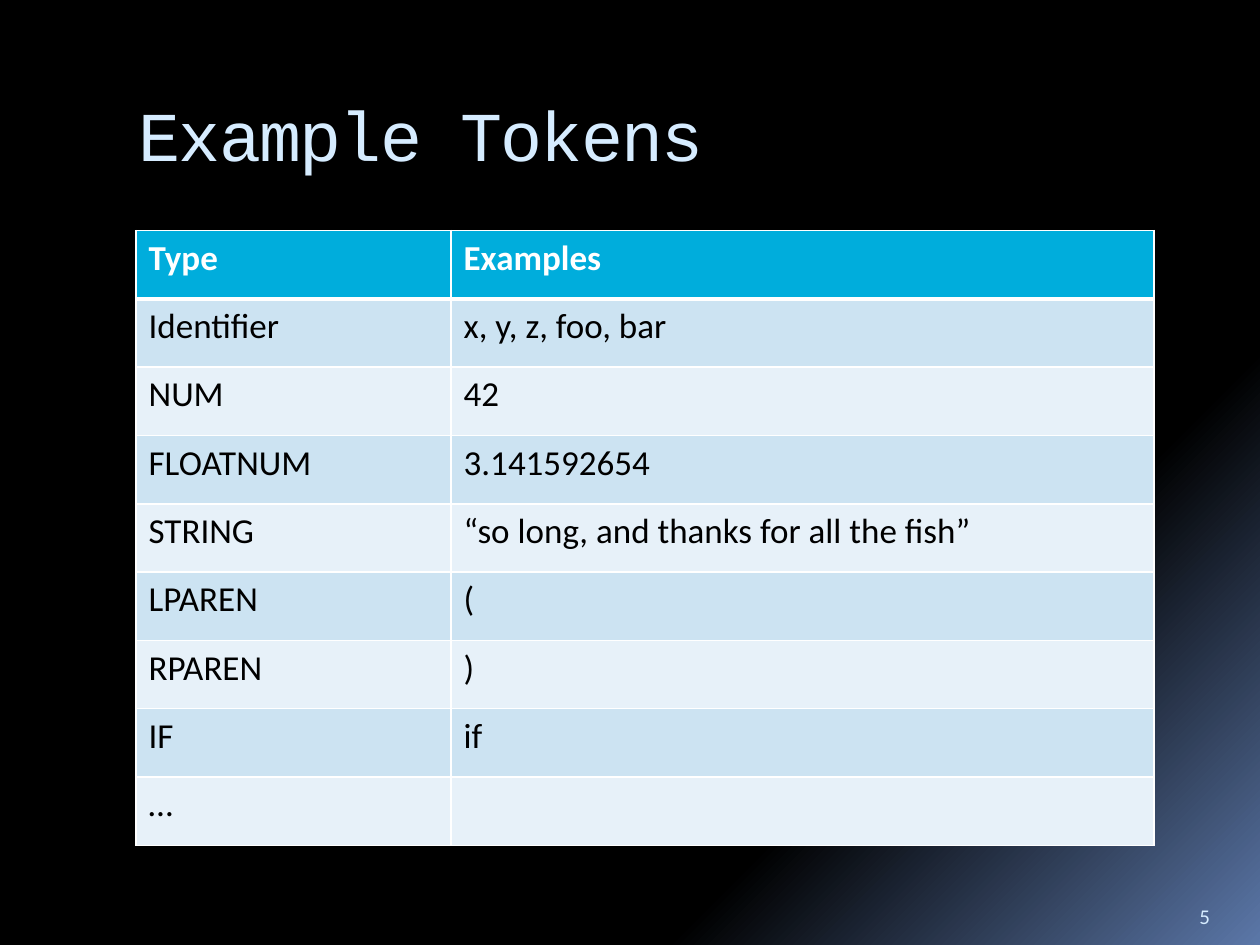
"""Build the slide that lists example tokens in a two-column table."""
from lxml import etree
from pptx import Presentation
from pptx import util as u
from pptx.dml.color import RGBColor
from pptx.enum import text as t
from pptx.oxml import ns

BLACK = RGBColor(0x00, 0x00, 0x00)
WHITE = RGBColor(0xFF, 0xFF, 0xFF)
ICE = RGBColor(0xD6, 0xEC, 0xFF)
DUSK = RGBColor(0x5B, 0x77, 0xA8)
CYAN = RGBColor(0x00, 0xAD, 0xDC)
BANDS = RGBColor(0xCC, 0xE3, 0xF2), RGBColor(0xE7, 0xF1, 0xF9)

TOKENS = [
    ("Type", "Examples"),
    ("Identifier", "x, y, z, foo, bar"),
    ("NUM", "42"),
    ("FLOATNUM", "3.141592654"),
    ("STRING", "“so long, and thanks for all the fish”"),
    ("LPAREN", "("),
    ("RPAREN", ")"),
    ("IF", "if"),
    ("…", ""),
]


def px(*vals):
    return [u.Emu(v * 9144) for v in vals]


def write(frame, words, size=20, color=BLACK, font="Calibri", bold=False, space=0):
    para = frame.paragraphs[0]
    para.alignment = t.PP_ALIGN.LEFT
    run = para.add_run()
    run.text = words
    run.font.size = u.Pt(size)
    run.font.name = font
    run.font.bold = bold
    run.font.color.rgb = color
    if space:
        run.font._element.set("spc", str(space * 100))


def edge(cell, side, width):
    props = cell._tc.get_or_add_tcPr()
    line = etree.SubElement(props, ns.qn(f"a:ln{side}"), w=str(u.Pt(width)))
    fill = etree.SubElement(line, ns.qn("a:solidFill"))
    etree.SubElement(fill, ns.qn("a:srgbClr"), val=str(WHITE))


class Deck:
    def __init__(self):
        self.prs = Presentation()
        self.prs.slide_width, self.prs.slide_height = px(1000, 750)
        self.slide = self.prs.slides.add_slide(self.prs.slide_layouts[5])

    def ground(self):
        fill = self.slide.background.fill
        fill.gradient()
        fill.gradient_angle = 315
        for stop, pos, color in zip(fill.gradient_stops, (0.73, 1), (BLACK, DUSK)):
            stop.position = pos
            stop.color.rgb = color

    def title(self, words, *box):
        shape = self.slide.shapes.title
        shape.left, shape.top, shape.width, shape.height = px(*box)
        shape.text_frame.vertical_anchor = t.MSO_ANCHOR.MIDDLE
        write(shape.text_frame, words, size=40, color=ICE, font="Courier New", space=-1)

    def label(self, words, *box):
        frame = self.slide.shapes.add_textbox(*px(*box)).text_frame
        frame.word_wrap = True
        frame.vertical_anchor = t.MSO_ANCHOR.BOTTOM
        write(frame, words, size=12, color=ICE)

    def table(self, rows, widths, *box):
        grid = self.slide.shapes.add_table(len(rows), len(widths), *px(*box)).table
        for col, width in zip(grid.columns, px(*widths)):
            col.width = width
        for r, row in enumerate(rows):
            head = r == 0
            for c, words in enumerate(row):
                cell = grid.cell(r, c)
                for side in "LRTB":
                    thick = (r, side) in ((0, "B"), (1, "T"))
                    edge(cell, side, 3 if thick else 1)
                cell.fill.solid()
                cell.fill.fore_color.rgb = CYAN if head else BANDS[(r - 1) % 2]
                if words:
                    write(cell.text_frame, words, color=WHITE if head else BLACK, bold=head)


def main():
    deck = Deck()
    deck.ground()
    deck.title("Example Tokens", 100, 56, 850, 100)
    deck.label("5", 942, 702, 50, 40)
    deck.table(TOKENS, (250, 558), 108, 183, 808, 488)
    deck.prs.save("out.pptx")


if __name__ == "__main__":
    main()
